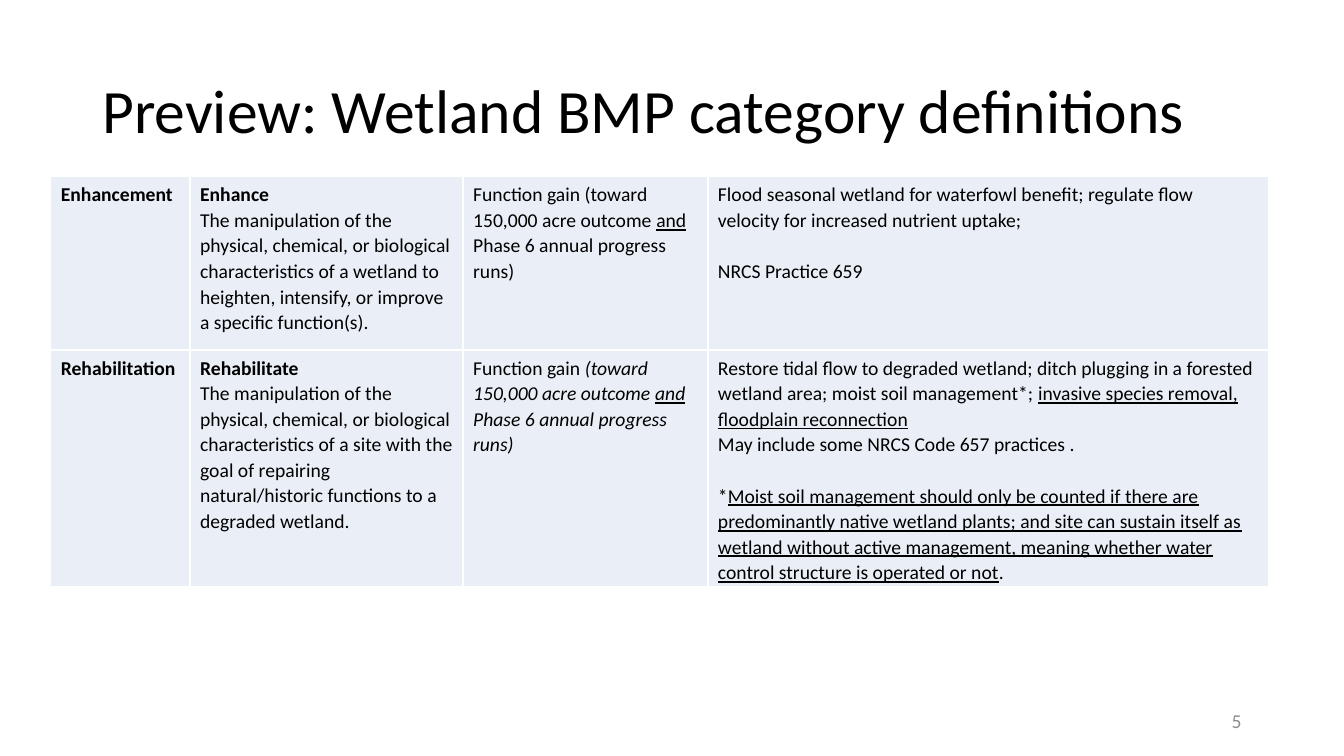
from dataclasses import dataclass

from lxml import etree
from pptx import Presentation
from pptx import util as u
from pptx.dml.color import RGBColor
from pptx.enum import text
from pptx.oxml import ns


@dataclass(frozen=True)
class Theme:
    """Colours, font and type sizes of the slide."""
    font: str = "Calibri"
    ink: str = "000000"
    muted: str = "8C8C8C"
    cell: str = "EAEFF7"
    border: str = "FFFFFF"
    title_size: int = 44
    body_size: int = 14
    line_spacing: float = 1.07
    gap: float = 18.3


THEME = Theme()

COLUMN_WIDTHS = (3.51, 6.88, 6.17, 14.12)
ROW_HEIGHTS = (4.37, 5.94)

GAP = "gap"

DEFINITIONS = [
    [
        [[("Enhancement", "b")]],
        [[("Enhance", "b")],
         [("The manipulation of the physical, chemical, or biological characteristics of a "
           "wetland to heighten, intensify, or improve a specific function(s).", "")]],
        [[("Function gain (toward 150,000 acre outcome ", ""), ("and", "u"),
          (" Phase 6 annual progress runs)", "")]],
        [[("Flood seasonal wetland for waterfowl benefit; regulate flow velocity for "
           "increased nutrient uptake;", "")],
         GAP,
         [("NRCS Practice 659", "")]],
    ],
    [
        [[("Rehabilitation", "b")]],
        [[("Rehabilitate", "b")],
         [("The manipulation of the physical, chemical, or biological characteristics of a "
           "site with the goal of repairing natural/historic functions to a degraded "
           "wetland.", "")]],
        [[("Function gain ", ""), ("(toward 150,000 acre outcome ", "i"), ("and", "iu"),
          (" Phase 6 annual progress runs)", "i")]],
        [[("Restore tidal flow to degraded wetland; ditch plugging in a forested wetland "
           "area; moist soil management*; ", ""),
          ("invasive species removal, floodplain reconnection", "u")],
         [("May include some NRCS Code 657 practices .", "")],
         GAP,
         [("*", ""),
          ("Moist soil management should only be counted if there are predominantly native "
           "wetland plants; and site can sustain itself as wetland without active "
           "management, meaning whether water control structure is operated or not", "u"),
          (".", "")]],
    ],
]


def style_run(run, size, color, marks=""):
    """Format a run; marks holds b, i and u for bold, italic and underline."""
    font = run.font
    font.name, font.size = THEME.font, u.Pt(size)
    font.color.rgb = RGBColor.from_string(color)
    font.bold, font.italic, font.underline = ("b" in marks, "i" in marks, "u" in marks)


def add_label(slide, box, wording, size, color, align, spacing=1.0):
    """Place one line of vertically centred text in the box."""
    text_frame = slide.shapes.add_textbox(*map(u.Cm, box)).text_frame
    text_frame.word_wrap = True
    text_frame.vertical_anchor = text.MSO_ANCHOR.MIDDLE
    text_frame.text = wording
    paragraph = text_frame.paragraphs[0]
    paragraph.alignment, paragraph.line_spacing = align, spacing
    style_run(paragraph.runs[0], size, color)


def add_title(slide, box):
    """Place the slide title in the box."""
    add_label(slide, box, "Preview: Wetland BMP category definitions",
              THEME.title_size, THEME.ink, text.PP_ALIGN.LEFT, 0.9)


def add_page_number(slide, box):
    """Place the page number in the box."""
    add_label(slide, box, "5", THEME.body_size, THEME.muted, text.PP_ALIGN.RIGHT)


def frame_cell(cell):
    """Give a cell its borders and fill."""
    properties = cell._tc.get_or_add_tcPr()
    for side in ("a:lnL", "a:lnR", "a:lnT", "a:lnB"):
        line = etree.SubElement(properties, ns.qn(side), w=str(u.Pt(1)))
        fill = etree.SubElement(line, ns.qn("a:solidFill"))
        etree.SubElement(fill, ns.qn("a:srgbClr"), val=THEME.border)
    cell.fill.solid()
    cell.fill.fore_color.rgb = RGBColor.from_string(THEME.cell)


def fill_cell(cell, content):
    """Write the paragraphs of a cell, turning each gap into space before the next."""
    frame_cell(cell)
    paragraph, space = cell.text_frame.paragraphs[0], 0
    for part in content:
        if part == GAP:
            space = THEME.gap
            continue
        if paragraph.runs:
            paragraph = cell.text_frame.add_paragraph()
        paragraph.line_spacing = THEME.line_spacing
        paragraph.space_before, space = u.Pt(space), 0
        for wording, marks in part:
            run = paragraph.add_run()
            run.text = wording
            style_run(run, THEME.body_size, THEME.ink, marks)


def add_definitions(slide, box):
    """Place the table of category definitions in the box."""
    table = slide.shapes.add_table(len(ROW_HEIGHTS), len(COLUMN_WIDTHS),
                                   *map(u.Cm, box)).table
    table.first_row = table.horz_banding = False
    for column, width in zip(table.columns, COLUMN_WIDTHS):
        column.width = u.Cm(width)
    for row, height, contents in zip(table.rows, ROW_HEIGHTS, DEFINITIONS):
        row.height = u.Cm(height)
        for cell, content in zip(row.cells, contents):
            fill_cell(cell, content)


def main():
    """Build the slide and save it."""
    presentation = Presentation()
    presentation.slide_width, presentation.slide_height = u.Cm(33.87), u.Cm(19.05)
    slide = presentation.slides.add_slide(presentation.slide_layouts[6])
    add_title(slide, (2.33, 1.01, 29.21, 3.68))
    add_page_number(slide, (23.92, 17.66, 7.62, 1.01))
    add_definitions(slide, (1.28, 4.45, sum(COLUMN_WIDTHS), sum(ROW_HEIGHTS)))
    presentation.save("out.pptx")


if __name__ == "__main__":
    main()
